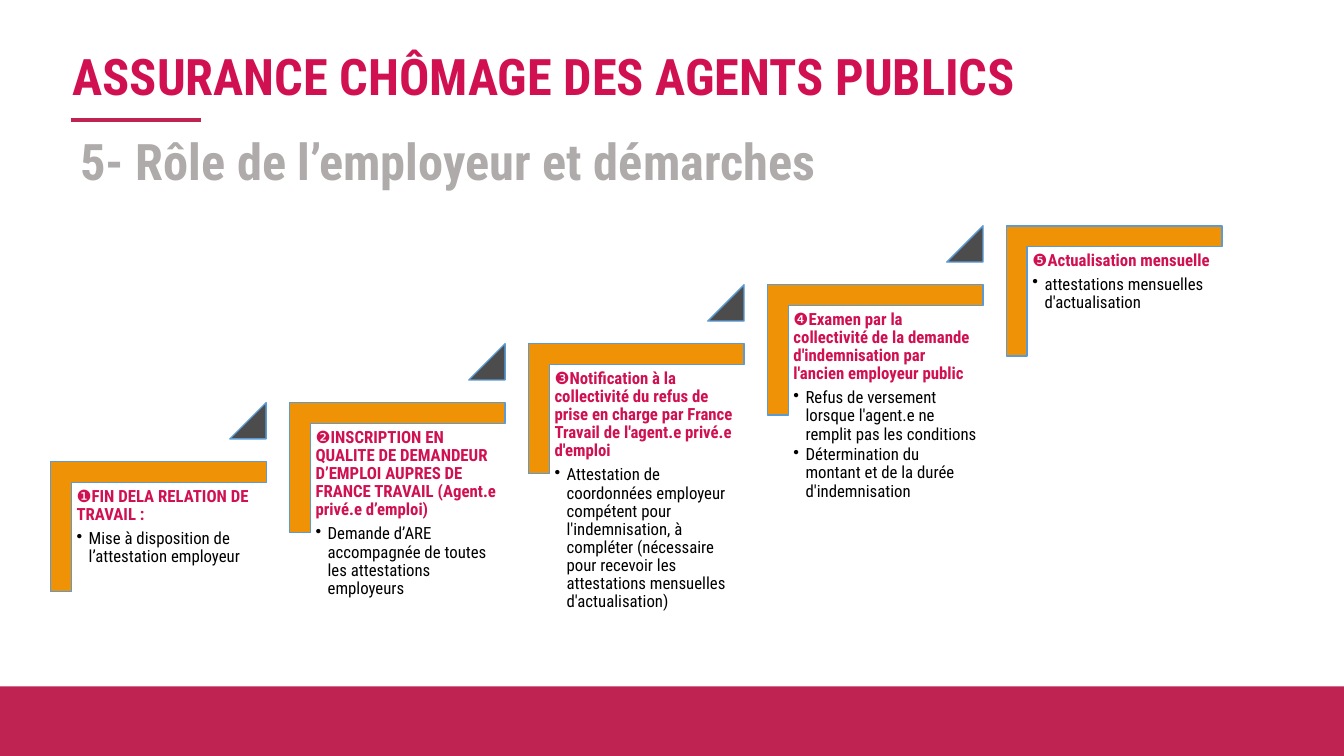
from dataclasses import dataclass

from lxml import etree
from pptx import Presentation
from pptx.dml.color import RGBColor
from pptx.enum.shapes import MSO_CONNECTOR, MSO_SHAPE
from pptx.enum.text import MSO_ANCHOR, MSO_AUTO_SIZE, PP_ALIGN
from pptx.oxml.ns import qn
from pptx.util import Inches, Pt

RECTANGLE = MSO_SHAPE.RECTANGLE
CORNER = MSO_SHAPE.CORNER
TRIANGLE = MSO_SHAPE.ISOSCELES_TRIANGLE
STRAIGHT = MSO_CONNECTOR.STRAIGHT
TOP = MSO_ANCHOR.TOP
LEFT = PP_ALIGN.LEFT
NO_AUTOFIT = MSO_AUTO_SIZE.NONE


@dataclass(frozen=True)
class Theme:
    font: str = "Roboto Condensed"
    heading_size: float = 36
    step_size: float = 12
    line_spacing: float = 0.9
    band: str = "BE2352"
    accent: str = "D01050"
    muted: str = "AFABAB"
    bracket: str = "EF9205"
    marker: str = "4C4C4C"
    outline: str = "5B9BD5"
    text: str = "000000"


THEME = Theme()

STEPS = [
    ("❶", "FIN DELA RELATION DE TRAVAIL :",
     ["Mise à disposition de l’attestation employeur"]),
    ("❷", "INSCRIPTION EN QUALITE DE DEMANDEUR D’EMPLOI AUPRES DE FRANCE TRAVAIL "
     "(Agent.e privé.e d’emploi)",
     ["Demande d’ARE accompagnée de toutes les attestations employeurs"]),
    ("❸", "Notification à la collectivité du refus de prise en charge par France "
     "Travail de l'agent.e privé.e d'emploi",
     ["Attestation de coordonnées employeur compétent pour l'indemnisation, à "
      "compléter (nécessaire pour recevoir les attestations mensuelles d'actualisation)"]),
    ("❹", "Examen par la collectivité de la demande d'indemnisation par l'ancien "
     "employeur public",
     ["Refus de versement lorsque l'agent.e ne remplit pas les conditions",
      "Détermination du montant et de la durée d'indemnisation"]),
    ("❺", "Actualisation mensuelle",
     ["attestations mensuelles d'actualisation"]),
]


def style_run(run, size, color, bold):
    run.font.name = THEME.font
    run.font.size = Pt(size)
    run.font.bold = bold
    run.font.color.rgb = RGBColor.from_string(color)


def add_filled_shape(slide, preset, left, top, width, height, fill, outline=None):
    shape = slide.shapes.add_shape(
        preset, Inches(left), Inches(top), Inches(width), Inches(height))
    shape.shadow.inherit = False
    shape.fill.solid()
    shape.fill.fore_color.rgb = RGBColor.from_string(fill)
    if outline:
        shape.line.color.rgb = RGBColor.from_string(outline)
        shape.line.width = Pt(1)
    else:
        shape.line.fill.background()
    return shape


def fill_heading(heading, text, color):
    frame = heading.text_frame
    frame.text = text
    frame.word_wrap = True
    frame.auto_size = NO_AUTOFIT
    frame.vertical_anchor = TOP
    paragraph = frame.paragraphs[0]
    paragraph.alignment = LEFT
    paragraph.line_spacing = THEME.line_spacing
    style_run(paragraph.runs[0], THEME.heading_size, color, True)


def add_header(slide, left, top, width):
    title = slide.shapes.title
    title.left, title.top = Inches(left), Inches(top)
    title.width, title.height = Inches(width), Inches(0.82)
    fill_heading(title, "ASSURANCE CHÔMAGE DES AGENTS PUBLICS", THEME.accent)

    rule_left, rule_top = Inches(left + 0.08), Inches(top + 0.72)
    rule = slide.shapes.add_connector(
        STRAIGHT, rule_left, rule_top, rule_left + Inches(1.29), rule_top)
    rule.line.color.rgb = RGBColor.from_string(THEME.band)
    rule.line.width = Pt(3)
    etree.SubElement(rule._element.spPr, qn("a:effectLst"))

    subtitle = slide.shapes.add_textbox(
        rule_left, Inches(top + 0.84), Inches(width - 0.3), Inches(0.67))
    fill_heading(subtitle, "5- Rôle de l’employeur et démarches", THEME.muted)


def add_bullet(paragraph):
    properties = paragraph._p.get_or_add_pPr()
    properties.set("marL", str(Inches(0.12)))
    properties.set("indent", str(-Inches(0.12)))
    etree.SubElement(properties, qn("a:buChar")).set("char", "•")


def add_step(slide, left, top, width, height, step):
    number, heading, details = step
    bracket = add_filled_shape(
        slide, CORNER, left + (width - height) / 2, top + (height - width) / 2,
        height, width, THEME.bracket, THEME.outline)
    bracket.rotation = 90
    bracket.adjustments[0] = bracket.adjustments[1] = 0.161

    description = slide.shapes.add_textbox(
        Inches(left + 0.21), Inches(top + 0.21), Inches(width - 0.21), Inches(1.69))
    frame = description.text_frame
    frame.word_wrap = True
    frame.margin_left = frame.margin_right = Inches(0.05)
    frame.margin_top = frame.margin_bottom = Inches(0.05)

    heading_line = frame.paragraphs[0]
    heading_line.line_spacing = THEME.line_spacing
    heading_line.space_after = Pt(4.2)
    for text, bold in ((number, False), (heading, True)):
        run = heading_line.add_run()
        run.text = text
        style_run(run, THEME.step_size, THEME.accent, bold)

    for detail in details:
        detail_line = frame.add_paragraph()
        detail_line.text = detail
        add_bullet(detail_line)
        detail_line.line_spacing = THEME.line_spacing
        detail_line.space_after = Pt(1.8)
        style_run(detail_line.runs[0], THEME.step_size, THEME.text, False)


def add_staircase(slide, left, bottom_step_top, step_across, step_up):
    width, height, marker_size = 2.14, 1.29, 0.36
    for index, step in enumerate(STEPS):
        step_left = left + index * step_across
        step_top = bottom_step_top - index * step_up
        add_step(slide, step_left, step_top, width, height, step)
        if index < len(STEPS) - 1:
            marker = add_filled_shape(
                slide, TRIANGLE, step_left + width - marker_size, step_top - step_up,
                marker_size, marker_size, THEME.marker, THEME.outline)
            marker.adjustments[0] = 1


def main():
    deck = Presentation()
    deck.slide_width, deck.slide_height = Inches(13.33), Inches(7.5)
    slide = deck.slides.add_slide(deck.slide_layouts[5])
    add_filled_shape(slide, RECTANGLE, 0, 6.81, 13.33, 0.69, THEME.band)
    add_header(slide, 0.62, 0.47, 11.71)
    add_staircase(slide, 0.5, 4.58, 2.37, 0.585)
    deck.save("out.pptx")


if __name__ == "__main__":
    main()
